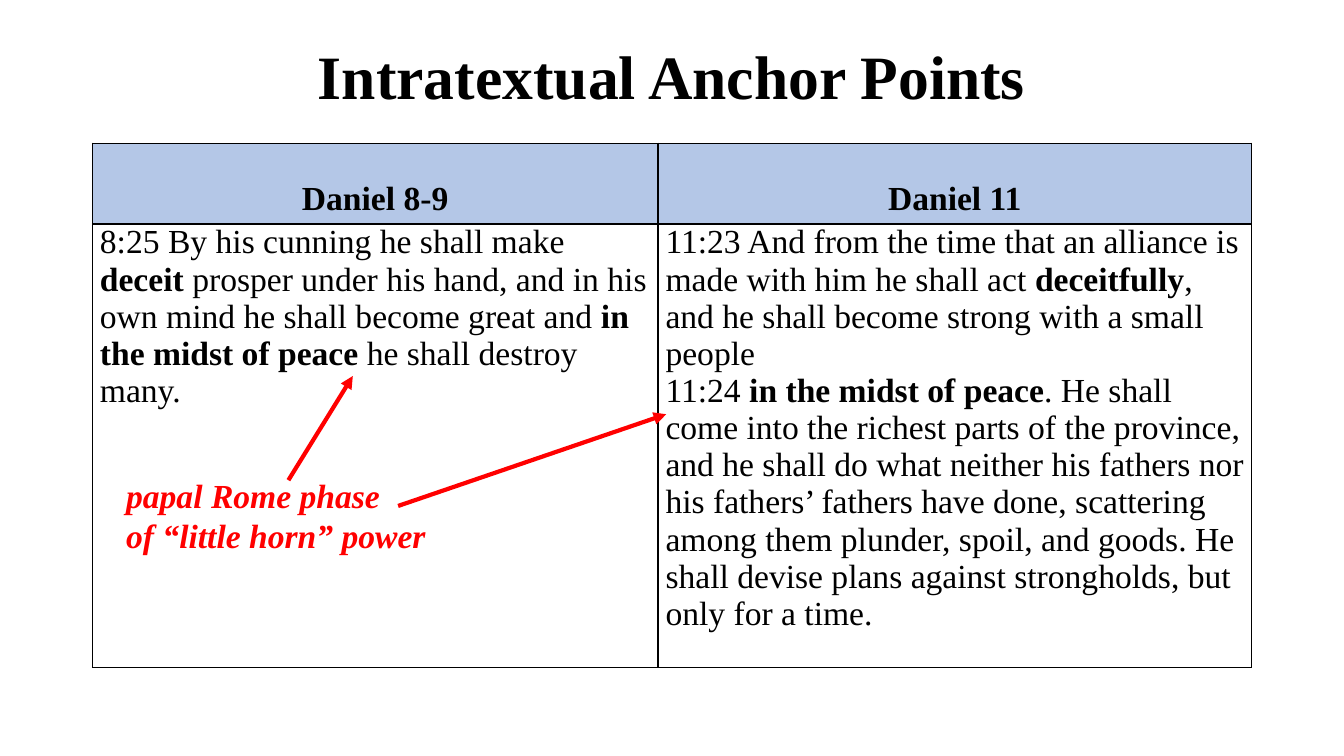
from lxml.etree import SubElement
from pptx import Presentation
from pptx.dml.color import RGBColor
from pptx.enum.shapes import MSO_CONNECTOR
from pptx.enum.text import MSO_ANCHOR, MSO_AUTO_SIZE, PP_ALIGN
from pptx.oxml.ns import qn
from pptx.util import Pt

BLACK = RGBColor(0x00, 0x00, 0x00)
RED = RGBColor(0xFF, 0x00, 0x00)
HEADER_BLUE = RGBColor(0xB4, 0xC7, 0xE7)
FONT = "Times New Roman"

COLUMN_WIDTHS = (404, 424)
ROW_HEIGHTS = (45.4, 214.6)
HEADERS = ("Daniel 8-9", "Daniel 11")
PASSAGES = (
    [
        [
            ("8:25 By his cunning he shall make ", False),
            ("deceit ", True),
            ("prosper under his hand, and in his own mind he shall become great and ", False),
            ("in the midst of peace", True),
            (" he shall destroy many.", False),
        ],
    ],
    [
        [
            ("11:23 And from the time that an alliance is made with him he shall act ", False),
            ("deceitfully", True),
            (", and he shall become strong with a small people", False),
        ],
        [
            ("11:24 ", False),
            ("in the midst of peace", True),
            (". He shall come into the richest parts of the province, and he shall do what "
             "neither his fathers nor his fathers’ fathers have done, scattering among them "
             "plunder, spoil, and goods. He shall devise plans against strongholds, but only "
             "for a time.", False),
        ],
    ],
)
NOTE = ("papal Rome phase", "of “little horn” power")
ARROWS = (
    ((206, 343), (252, 268.6)),
    ((284.4, 361.4), (475.9, 295.9)),
)


def write_text(frame, paragraphs, size=24, color=BLACK, italic=False,
               alignment=PP_ALIGN.LEFT, line_spacing=1.0):
    for index, runs in enumerate(paragraphs):
        paragraph = frame.paragraphs[0] if index == 0 else frame.add_paragraph()
        paragraph.alignment = alignment
        paragraph.line_spacing = line_spacing
        for text, bold in runs:
            run = paragraph.add_run()
            run.text = text
            run.font.name = FONT
            run.font.size = Pt(size)
            run.font.bold = bold
            run.font.italic = italic
            run.font.color.rgb = color


def add_text(slide, left, top, width, height, paragraphs, wrap, **style):
    frame = slide.shapes.add_textbox(Pt(left), Pt(top), Pt(width), Pt(height)).text_frame
    frame.word_wrap = wrap
    write_text(frame, paragraphs, **style)
    return frame


def set_borders(cell):
    properties = cell._tc.get_or_add_tcPr()
    for index, side in enumerate(("a:lnL", "a:lnR", "a:lnT", "a:lnB")):
        line = properties.makeelement(qn(side), {"w": str(Pt(1))})
        fill = SubElement(line, qn("a:solidFill"))
        SubElement(fill, qn("a:srgbClr"), val=str(BLACK))
        properties.insert(index, line)


def add_passage_table(slide):
    table = slide.shapes.add_table(
        len(ROW_HEIGHTS), len(COLUMN_WIDTHS), Pt(66), Pt(102.4),
        Pt(sum(COLUMN_WIDTHS)), Pt(sum(ROW_HEIGHTS))).table
    table.first_row = False
    table.horz_banding = False
    for column, width in zip(table.columns, COLUMN_WIDTHS):
        column.width = Pt(width)
    for row, height in zip(table.rows, ROW_HEIGHTS):
        row.height = Pt(height)
    for cell in table.iter_cells():
        cell.margin_left = cell.margin_right = Pt(5.4)
        cell.margin_top = cell.margin_bottom = Pt(0)
        cell.fill.background()
        set_borders(cell)
    for index, (header, passage) in enumerate(zip(HEADERS, PASSAGES)):
        header_cell = table.cell(0, index)
        header_cell.fill.solid()
        header_cell.fill.fore_color.rgb = HEADER_BLUE
        write_text(header_cell.text_frame, [[(header, True)]],
                   alignment=PP_ALIGN.CENTER, line_spacing=2.0)
        write_text(table.cell(1, index).text_frame, passage)


def add_arrow(slide, start, end):
    arrow = slide.shapes.add_connector(
        MSO_CONNECTOR.STRAIGHT, *(Pt(value) for value in start + end))
    arrow.line.color.rgb = RED
    arrow.line.width = Pt(3)
    SubElement(arrow.line._get_or_add_ln(), qn("a:tailEnd"), type="triangle")
    SubElement(arrow._element.spPr, qn("a:effectLst"))


def main():
    presentation = Presentation()
    presentation.slide_width = Pt(960)
    presentation.slide_height = Pt(540)
    slide = presentation.slides.add_slide(presentation.slide_layouts[6])

    title = add_text(slide, 66, 28.8, 828, 55.4, [[("Intratextual Anchor Points", True)]],
                     wrap=True, size=44, alignment=PP_ALIGN.CENTER, line_spacing=0.9)
    title.vertical_anchor = MSO_ANCHOR.MIDDLE
    add_passage_table(slide)
    note = add_text(slide, 83, 335.5, 230.4, 65.5, [[(line, True)] for line in NOTE],
                    wrap=False, color=RED, italic=True)
    note.auto_size = MSO_AUTO_SIZE.SHAPE_TO_FIT_TEXT
    for start, end in ARROWS:
        add_arrow(slide, start, end)

    presentation.save("out.pptx")


if __name__ == "__main__":
    main()
